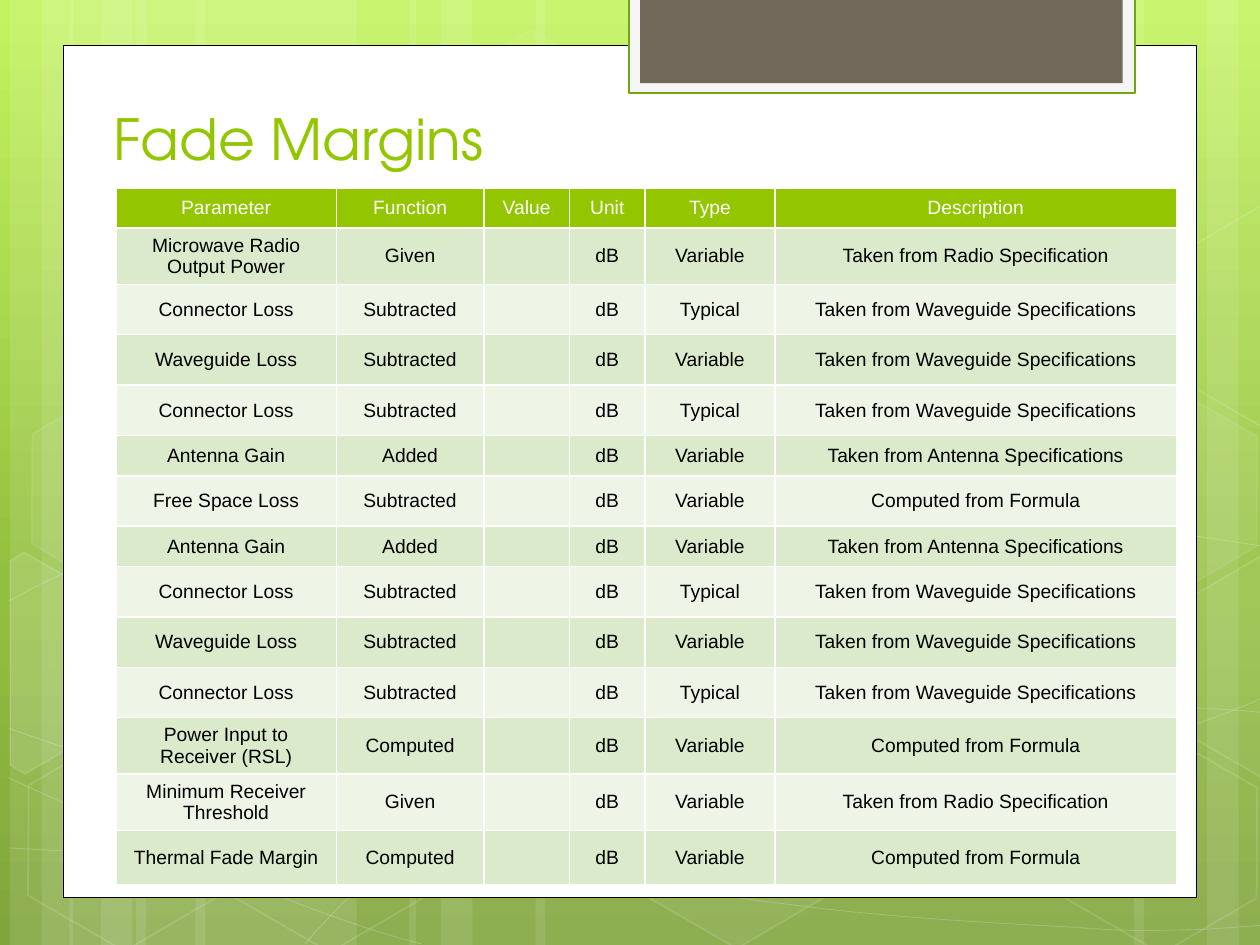
import copy
import math
from lxml import etree
from pptx import Presentation, util as u
from pptx.dml.color import RGBColor
from pptx.enum import shapes, text
from pptx.oxml.ns import qn

WHITE = RGBColor(0xFF, 0xFF, 0xFF)
BLACK = RGBColor(0x00, 0x00, 0x00)
LIME = RGBColor(0x94, 0xC6, 0x00)
FRAME_GREEN = RGBColor(0x74, 0xA5, 0x10)
FRAME_GREY = RGBColor(0xF5, 0xF5, 0xF5)
BROWN = RGBColor(0x71, 0x68, 0x5A)
BAND_DARK = RGBColor(0xDC, 0xEA, 0xCC)
BAND_LIGHT = RGBColor(0xEE, 0xF5, 0xE7)
SKY = [(0, RGBColor(0xC3, 0xF3, 0x5F)), (0.62, RGBColor(0x93, 0xBF, 0x3F)),
       (1, RGBColor(0x81, 0xA5, 0x3E))]


def paint(shape, fill=None, fill_alpha=100, line=None, width=1, line_alpha=100):
    shape.shadow.inherit = False
    properties = shape._element.spPr
    for target, route, color, alpha in (
            (shape.fill, "a:solidFill", fill, fill_alpha),
            (shape.line.fill, "a:ln/a:solidFill", line, line_alpha)):
        if color is None:
            target.background()
            continue
        target.solid()
        target.fore_color.rgb = color
        if alpha < 100:
            tint = properties.xpath(route + "/a:srgbClr")[0]
            etree.SubElement(tint, qn("a:alpha"), val=str(alpha * 1000))
    if line is not None:
        shape.line.width = u.Pt(width)


def write(frame, words, *, size, font, color, align=text.PP_ALIGN.LEFT):
    para = frame.paragraphs[0]
    para.alignment = align
    if not words:
        etree.SubElement(para._p, qn("a:endParaRPr"), sz=str(size * 100))
        return
    span = para.add_run()
    span.text = words
    span.font.size = u.Pt(size)
    span.font.name = font
    span.font.bold = False
    span.font.color.rgb = color


deck = Presentation()
deck.slide_width, deck.slide_height = u.Inches(10), u.Inches(7.5)
page = deck.slides.add_slide(deck.slide_layouts[6])

sky = page.background.fill
sky.gradient()
sky.gradient_angle = 270
stop_list = page._element.find(".//" + qn("a:gsLst"))
stop_list.append(copy.deepcopy(stop_list[0]))
for stop, (position, color) in zip(sky.gradient_stops, SKY):
    stop.position = position
    stop.color.rgb = color

stripes = [(1.08, 1.75), (0.08, 0.5), (0.33, 0.83), (1.55, 1.75), (0.55, 0.5), (0.8, 0.83),
           (7.33, 1.75), (9.58, 0.5), (9, 0.83), (4.25, 3.08), (3.25, 0.5), (3.5, 0.83)]
for left, width in stripes:
    stripe = page.shapes.add_shape(shapes.MSO_SHAPE.RECTANGLE, u.Inches(left), 0,
                                   u.Inches(width), deck.slide_height)
    stripe.rotation = 180 if left > 7 else 0
    paint(stripe, fill=WHITE, fill_alpha=10)

curves = [
    [(0.07, 6.73), (0.61, 6.76), (1.15, 6.79), (1.9, 6.78), (2.65, 6.77), (3.58, 6.75),
     (4.58, 6.65), (5.58, 6.55), (7, 6.36), (7.92, 6.17), (8.83, 5.98), (9.77, 5.68),
     (10.07, 5.51)],
    [(0.07, 4.77), (0.36, 4.61), (0.65, 4.46), (1.21, 4.31), (1.78, 4.16), (2.59, 3.94),
     (3.47, 3.87), (4.36, 3.8), (5.44, 3.79), (6.54, 3.87), (7.64, 3.95), (9.47, 4.26),
     (10.07, 4.34)],
    [(0.06, 6.17), (1.27, 6.72), (2.47, 7.27), (3.34, 7.49)],
    [(0.07, 5.78), (0.38, 5.89), (0.7, 6), (1.28, 6.16), (1.86, 6.31), (2.73, 6.56),
     (3.57, 6.73), (4.4, 6.9), (5.45, 7.08), (6.28, 7.18), (7.11, 7.29), (8, 7.33),
     (8.53, 7.36), (9.05, 7.4), (9.19, 7.38), (9.45, 7.38), (9.71, 7.37), (9.89, 7.35),
     (10.07, 7.34)],
    [(2.42, 7.49), (2.6, 7.29), (2.78, 7.09), (3.02, 6.91), (3.26, 6.73), (3.6, 6.53),
     (3.88, 6.39), (4.16, 6.25), (4.33, 6.19), (4.7, 6.09), (5.06, 5.99), (5.73, 5.85),
     (6.08, 5.78), (6.44, 5.71), (6.49, 5.71), (6.8, 5.69), (7.11, 5.66), (7.6, 5.63),
     (7.94, 5.62), (8.29, 5.61), (8.86, 5.62), (8.86, 5.62), (9.08, 5.62), (9.31, 5.62),
     (9.53, 5.62), (9.71, 5.63), (9.88, 5.64), (9.97, 5.65), (10.06, 5.66), (10.03, 5.65),
     (10.06, 5.66)],
]
for knots in curves:
    points = [(u.Inches(x), u.Inches(y)) for x, y in knots]
    builder = page.shapes.build_freeform(*points[0])
    builder.add_line_segments(points[1:], close=False)
    curve = builder.convert_to_shape()
    segments = curve._element.xpath(".//a:lnTo")
    for first in range(0, len(segments), 3):
        bezier = etree.Element(qn("a:cubicBezTo"))
        segments[first].addprevious(bezier)
        for segment in segments[first:first + 3]:
            bezier.append(segment[0])
            segment.getparent().remove(segment)
    paint(curve, line=WHITE, width=0.5, line_alpha=20)

hexagons = [(3.34, 0.36, 4, 8), (4.97, 5.89, 6, 12), (0.11, 5.91, 0, 12), (0.14, 3.12, 7, 8),
            (1.74, 5.92, 0, 12), (7.53, 4.53, 10, 12), (8.34, 5.93, 0, 12), (8.34, 3.14, 7, 8)]
for left, top, fill_alpha, line_alpha in hexagons:
    hexagon = page.shapes.add_shape(shapes.MSO_SHAPE.HEXAGON, u.Inches(left), u.Inches(top),
                                    u.Inches(1.75), u.Inches(1.52))
    hexagon.adjustments[0] = 0.285
    hexagon.rotation = 30
    paint(hexagon, fill=WHITE if fill_alpha else None, fill_alpha=fill_alpha,
          line=WHITE, line_alpha=line_alpha)

cut_hexagons = [
    ((0.36, 5.35), 10, [(0.08, 4.45), (0.19, 4.38), (0.96, 4.82), (0.95, 5.7), (0.2, 6.14), (0.08, 6.07)]),
    ((9.85, 5.2), 4, [(9.26, 4.85), (10.01, 4.41), (10.09, 4.46), (10.09, 6.13), (10.02, 6.17), (9.26, 5.73)]),
    ((9.85, 2.41), 0, [(9.26, 2.07), (10.01, 1.63), (10.1, 1.68), (10.09, 3.35), (10.02, 3.39), (9.26, 2.95)]),
]
cos, sin = math.cos(math.radians(30)), math.sin(math.radians(30))
for (mid_x, mid_y), fill_alpha, corners in cut_hexagons:
    points = [(u.Inches(mid_x + (x - mid_x) * cos + (y - mid_y) * sin),
               u.Inches(mid_y - (x - mid_x) * sin + (y - mid_y) * cos)) for x, y in corners]
    builder = page.shapes.build_freeform(*points[0])
    builder.add_line_segments(points[1:], close=True)
    cut_hexagon = builder.convert_to_shape()
    cut_hexagon.rotation = 30
    paint(cut_hexagon, fill=WHITE if fill_alpha else None, fill_alpha=fill_alpha,
          line=WHITE, line_alpha=12)

panels = [((0.5, 0.36, 9, 6.76), WHITE, BLACK, 0.5),
          ((4.99, -0.02, 4.02, 0.76), FRAME_GREY, FRAME_GREEN, 1.25),
          ((5.08, -0.02, 3.83, 0.68), BROWN, None, 0)]
for place, fill, line, width in panels:
    panel = page.shapes.add_shape(shapes.MSO_SHAPE.RECTANGLE, *map(u.Inches, place))
    paint(panel, fill=fill, line=line, width=width)

title = page.shapes.add_textbox(*map(u.Inches, (0.8, 0.83, 8.42, 0.58))).text_frame
title.word_wrap = True
title.vertical_anchor = text.MSO_ANCHOR.BOTTOM
write(title, "Fade Margins", size=32.4, font="TeX Gyre Adventor", color=LIME)

WAVEGUIDE = "Taken from Waveguide Specifications"
ANTENNA = "Taken from Antenna Specifications"
RADIO = "Taken from Radio Specification"
FORMULA = "Computed from Formula"
connector = (0.4, "Connector Loss", "Subtracted", "Typical", WAVEGUIDE)
waveguide = (0.4, "Waveguide Loss", "Subtracted", "Variable", WAVEGUIDE)
antenna = (0.32, "Antenna Gain", "Added", "Variable", ANTENNA)
budget = [
    (0.43, "Microwave Radio Output Power", "Given", "Variable", RADIO),
    connector, waveguide, connector, antenna,
    (0.4, "Free Space Loss", "Subtracted", "Variable", FORMULA),
    antenna, connector, waveguide, connector,
    (0.43, "Power Input to Receiver (RSL)", "Computed", "Variable", FORMULA),
    (0.43, "Minimum Receiver Threshold", "Given", "Variable", RADIO),
    (0.43, "Thermal Fade Margin", "Computed", "Variable", FORMULA),
]
rows = [(0.32, ("Parameter", "Function", "Value", "Unit", "Type", "Description"))]
rows += [(height, (parameter, function, "", "dB", kind, description))
         for height, parameter, function, kind, description in budget]
widths = [1.75, 1.17, 0.68, 0.6, 1.03, 3.19]
table = page.shapes.add_table(len(rows), len(widths),
                              *map(u.Inches, (0.92, 1.49, 8.42, 5.6))).table
for column, width in zip(table.columns, widths):
    column.width = u.Inches(width)
for r, (height, words) in enumerate(rows):
    table.rows[r].height = u.Inches(height)
    for c, word in enumerate(words):
        cell = table.cell(r, c)
        cell.vertical_anchor = text.MSO_ANCHOR.MIDDLE
        cell.margin_top = cell.margin_bottom = u.Inches(0.04)
        for side in ("lnL", "lnR", "lnT", "lnB"):
            edge = etree.SubElement(cell._tc.get_or_add_tcPr(), qn("a:" + side), w=str(u.Pt(1)))
            edge_fill = etree.SubElement(edge, qn("a:solidFill"))
            etree.SubElement(edge_fill, qn("a:srgbClr"), val=str(WHITE))
        cell.fill.solid()
        cell.fill.fore_color.rgb = LIME if r == 0 else BAND_DARK if r % 2 else BAND_LIGHT
        write(cell.text_frame, word, size=11, font="Arial",
              color=WHITE if r == 0 else BLACK, align=text.PP_ALIGN.CENTER)

deck.save("out.pptx")
